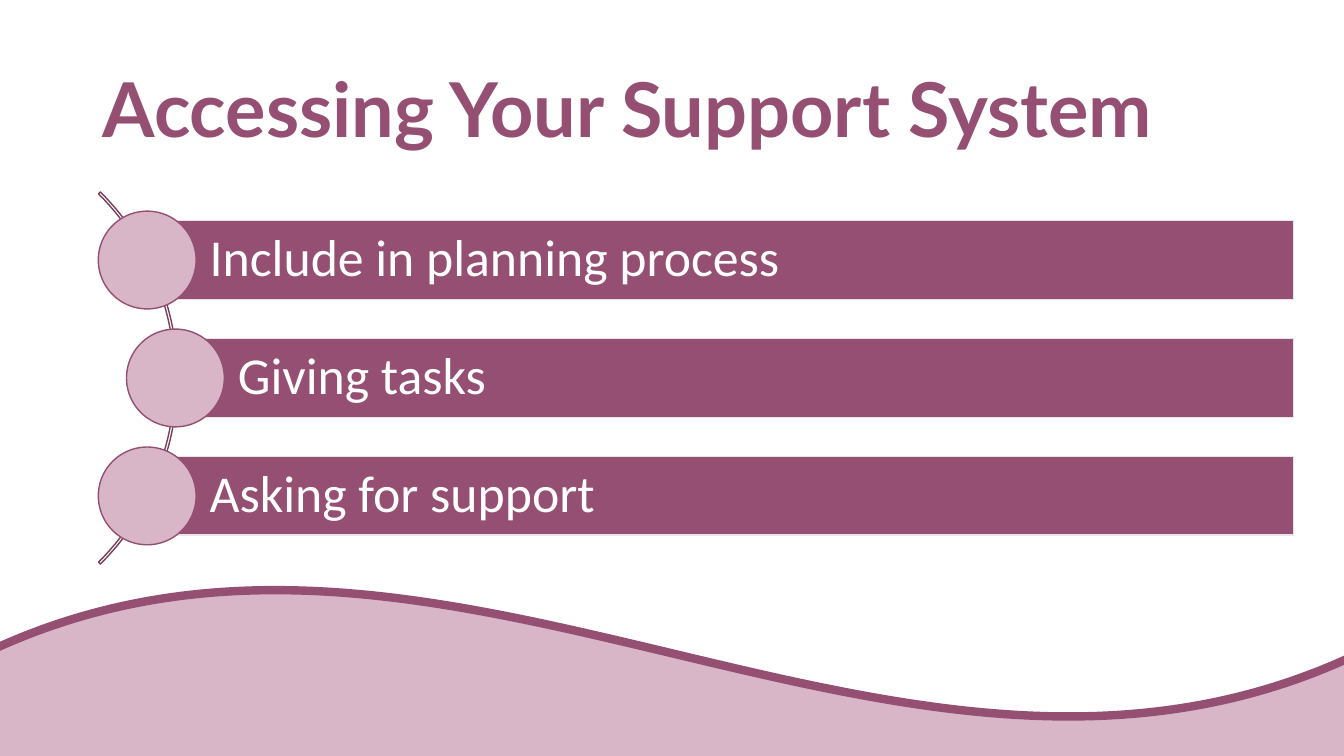
from dataclasses import dataclass

from pptx import Presentation
from pptx.dml.color import RGBColor
from pptx.enum.shapes import MSO_SHAPE
from pptx.enum.text import MSO_ANCHOR, PP_ALIGN
from pptx.util import Inches, Pt

WAVE = MSO_SHAPE.WAVE
ARC = MSO_SHAPE.BLOCK_ARC
BAR = MSO_SHAPE.RECTANGLE
CIRCLE = MSO_SHAPE.OVAL
MIDDLE = MSO_ANCHOR.MIDDLE
LEFT = PP_ALIGN.LEFT


@dataclass(frozen=True)
class Theme:
    """Colours, fonts and type sizes of the slide."""
    plum: RGBColor = RGBColor(0x95, 0x4F, 0x72)
    dark_plum: RGBColor = RGBColor(0x77, 0x3F, 0x5B)
    pink: RGBColor = RGBColor(0xD8, 0xB5, 0xC7)
    grey: RGBColor = RGBColor(0xE7, 0xE6, 0xE6)
    white: RGBColor = RGBColor(0xFF, 0xFF, 0xFF)
    title_font: str = "Lato"
    body_font: str = "Calibri"
    title_size: int = 54
    body_size: int = 37


THEME = Theme()
STEPS = (
    ("Include in planning process", 1.46),
    ("Giving tasks", 1.74),
    ("Asking for support", 1.46),
)
ARC_CENTRE_X, ARC_CENTRE_Y, ARC_SIZE = -0.85, 3.75, 5.22
STEP_PITCH = 1.17
BAR_RIGHT, BAR_HEIGHT = 12.83, 0.78
CIRCLE_SIZE = 0.97


def add_outlined_shape(slide, preset, box, fill, line, width=1):
    """Add a preset shape without shadow; a fill of None leaves it hollow."""
    shape = slide.shapes.add_shape(preset, *map(Inches, box))
    shape.shadow.inherit = False
    if fill is None:
        shape.fill.background()
    else:
        shape.fill.solid()
        shape.fill.fore_color.rgb = fill
    shape.line.color.rgb = line
    shape.line.width = Pt(width)
    return shape


def write_text(shape, text, font_name, size, color, bold=False):
    """Write one left-aligned, vertically centred paragraph."""
    text_frame = shape.text_frame
    text_frame.word_wrap = True
    text_frame.vertical_anchor = MIDDLE
    text_frame.text = text
    paragraph = text_frame.paragraphs[0]
    paragraph.alignment = LEFT
    paragraph.line_spacing = 0.9
    font = paragraph.runs[0].font
    font.name = font_name
    font.size = Pt(size)
    font.bold = bold
    font.color.rgb = color


def add_title(slide, text):
    """Add the slide title."""
    box = slide.shapes.add_textbox(*map(Inches, (0.92, 0.4, 11.5, 1.45)))
    write_text(box, text, THEME.title_font, THEME.title_size, THEME.plum, True)


def add_arc(slide):
    """Add the thin arc that links the circles."""
    box = (ARC_CENTRE_X - ARC_SIZE / 2, ARC_CENTRE_Y - ARC_SIZE / 2,
           ARC_SIZE, ARC_SIZE)
    arc = add_outlined_shape(slide, ARC, box, None, THEME.dark_plum)
    for index, value in enumerate((189, 27, 0.005)):
        arc.adjustments[index] = value


def add_step(slide, text, left, centre_y):
    """Add a labelled bar with a circle centred on its left edge."""
    bar_box = (left, centre_y - BAR_HEIGHT / 2, BAR_RIGHT - left, BAR_HEIGHT)
    bar = add_outlined_shape(slide, BAR, bar_box, THEME.plum, THEME.grey)
    bar.text_frame.margin_left = Inches(0.62)
    bar.text_frame.margin_right = Inches(0.1)
    bar.text_frame.margin_top = Inches(0.1)
    bar.text_frame.margin_bottom = Inches(0.1)
    write_text(bar, text, THEME.body_font, THEME.body_size, THEME.white)
    circle_box = (left - CIRCLE_SIZE / 2, centre_y - CIRCLE_SIZE / 2,
                  CIRCLE_SIZE, CIRCLE_SIZE)
    add_outlined_shape(slide, CIRCLE, circle_box, THEME.pink, THEME.plum)


def main():
    """Build and save the slide."""
    presentation = Presentation()
    presentation.slide_width = Inches(13.33)
    presentation.slide_height = Inches(7.5)
    slide = presentation.slides.add_slide(presentation.slide_layouts[6])
    add_outlined_shape(slide, WAVE, (-0.15, 5.83, 13.63, 5.21),
                       THEME.pink, THEME.plum, 6)
    add_title(slide, "Accessing Your Support System")
    add_arc(slide)
    for index, (text, left) in enumerate(STEPS):
        add_step(slide, text, left, ARC_CENTRE_Y + (index - 1) * STEP_PITCH)
    presentation.save("out.pptx")


if __name__ == "__main__":
    main()
